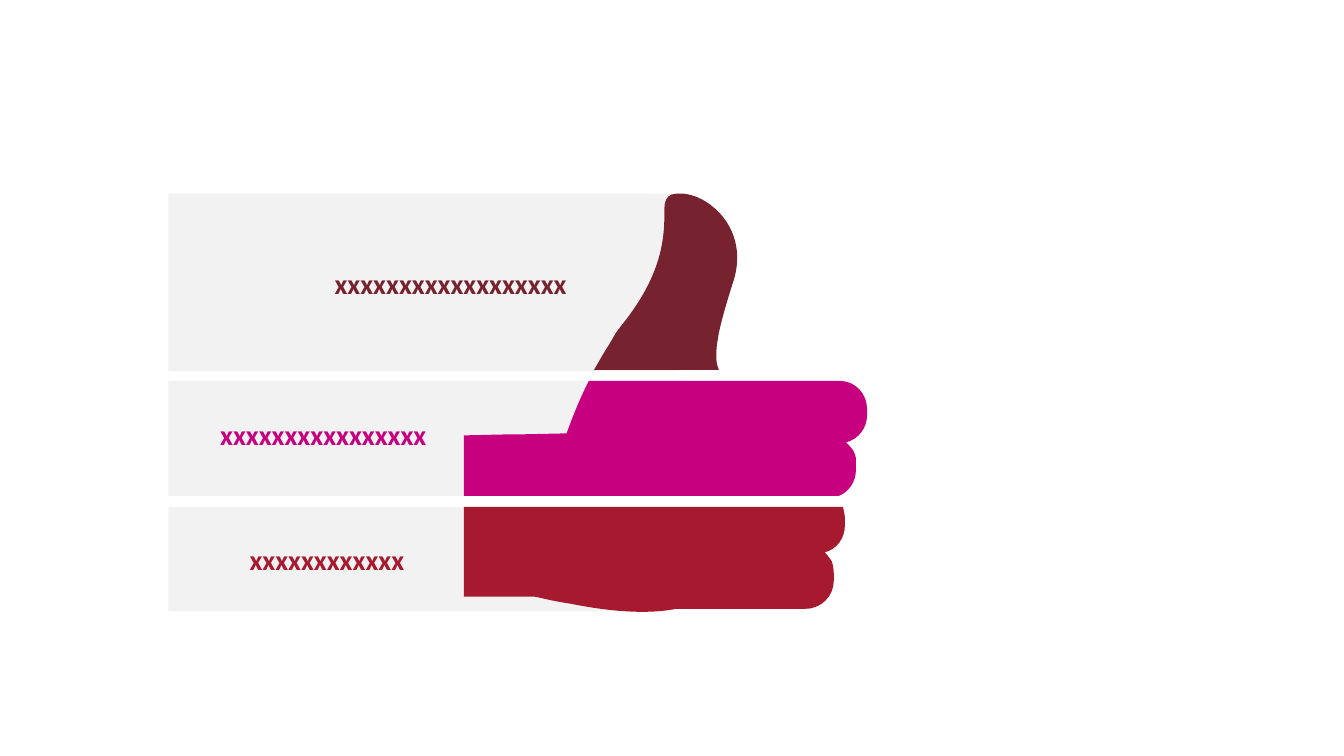
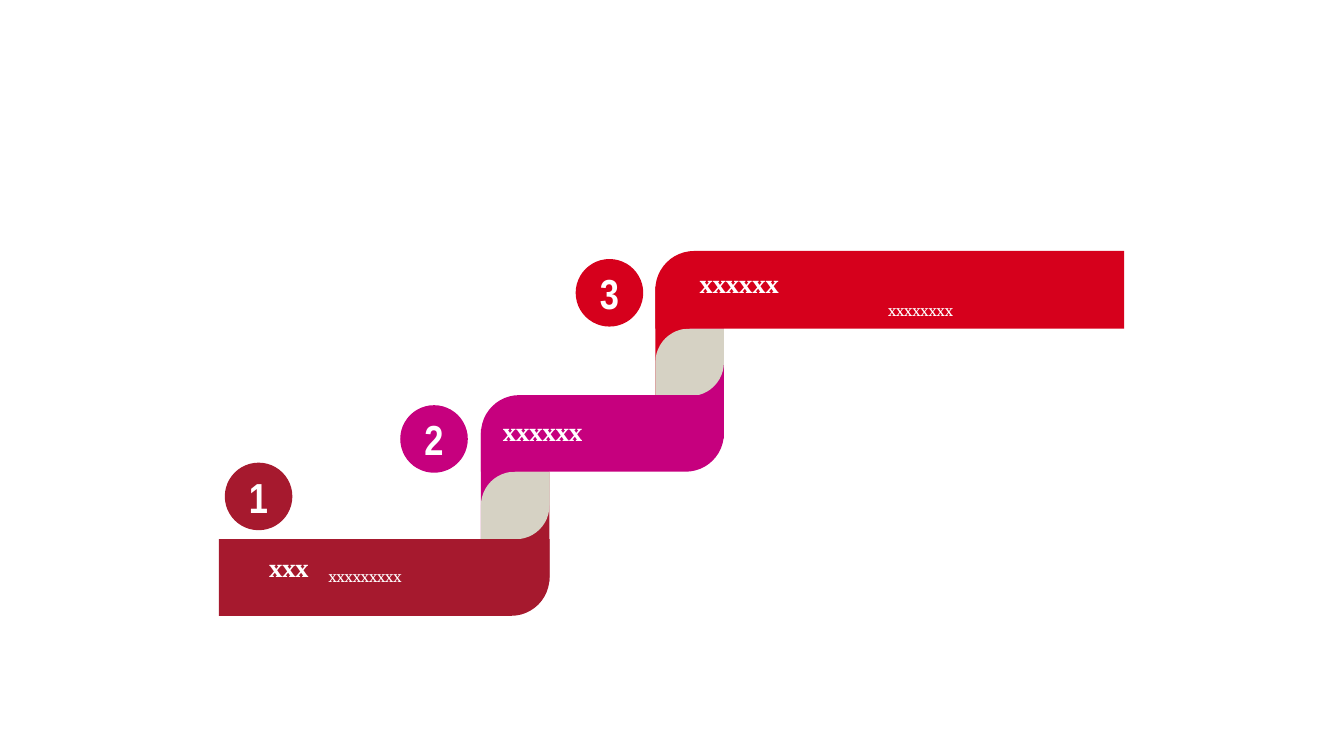
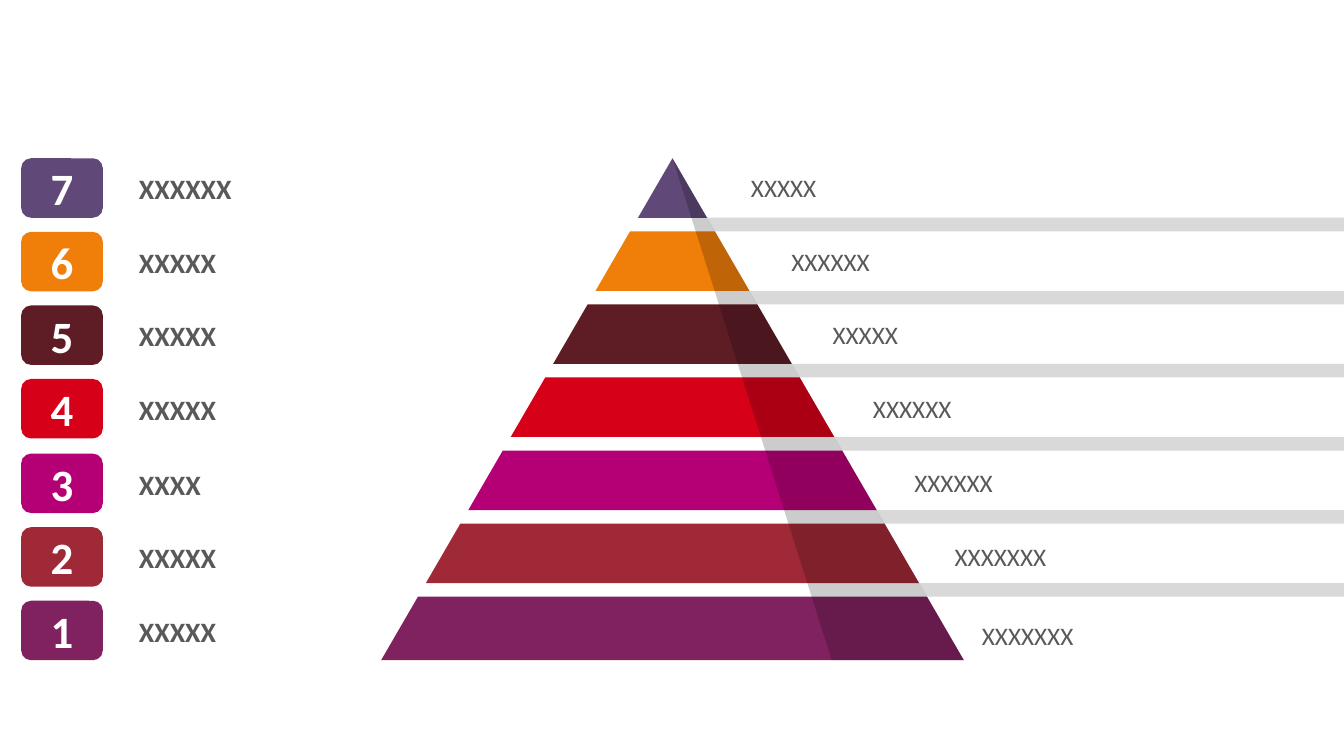
from lxml.etree import SubElement
from pptx import Presentation
from pptx.dml.color import RGBColor
from pptx.enum.shapes import MSO_SHAPE
from pptx.enum.text import MSO_ANCHOR, MSO_AUTO_SIZE, PP_ALIGN
from pptx.oxml.ns import qn
from pptx.util import Pt

PX = 9144
SLIDE_WIDTH, SLIDE_HEIGHT = 1333, 750
BLANK_LAYOUT = 6

COLOURS = {
    "white": "FFFFFF", "black": "000000", "panel": "F2F2F2", "stripe": "D9D9D9",
    "fold": "D6D2C4", "text": "595959", "maroon": "76232F", "magenta": "C6007E",
    "crimson": "A6192E", "red": "D6001C", "violet": "604878", "orange": "F07F09",
    "wine": "5E1C25", "scarlet": "D60019", "fuchsia": "B40074", "brick": "9F2936",
    "plum": "80225F",
}

FONTS = {
    "panel": {"name": "Calibri", "size": Pt(20), "bold": True},
    "step": {"name": "Cambria", "size": Pt(18), "bold": True},
    "detail": {"name": "Cambria", "size": Pt(12)},
    "circle": {"name": "Arial Narrow", "size": Pt(30), "bold": True},
    "badge": {"name": "Calibri", "size": Pt(32), "bold": True},
    "label": {"name": "Calibri", "size": Pt(20), "bold": True},
    "note": {"name": "Calibri", "size": Pt(18)},
}

EVEN_MARGINS = {
    "margin_left": 10 * PX, "margin_right": 10 * PX,
    "margin_top": 10 * PX, "margin_bottom": 10 * PX,
    "vertical_anchor": MSO_ANCHOR.MIDDLE, "word_wrap": True,
}
FRAMES = {
    "panel": {
        "margin_left": 0, "margin_right": 0, "vertical_anchor": MSO_ANCHOR.BOTTOM,
        "word_wrap": True, "auto_size": MSO_AUTO_SIZE.SHAPE_TO_FIT_TEXT,
    },
    "step": EVEN_MARGINS,
    "detail": EVEN_MARGINS,
    "circle": EVEN_MARGINS,
    "badge": {"vertical_anchor": MSO_ANCHOR.MIDDLE, "word_wrap": True},
}
FRAMES["label"] = FRAMES["note"] = {
    "vertical_anchor": MSO_ANCHOR.MIDDLE, "word_wrap": False,
    "auto_size": MSO_AUTO_SIZE.SHAPE_TO_FIT_TEXT,
}

THUMB = [
    (713, 367), (710, 361, 710, 353, 711, 342), (713, 330),
    (716, 316, 721, 299, 727, 280), (728, 277), (739, 238, 718, 214, 708, 206),
    (698, 197, 685, 192, 675, 192), (672, 192, 669, 192, 666, 193),
    (661, 195, 659, 200, 659, 206), (659, 232, 659, 267, 621, 317),
    (617, 322, 614, 326, 611, 330), (604, 342), (598, 351, 594, 359, 589, 367),
]
UPPER_FINGERS = [
    (562, 430), (515, 431), (503, 431), (460, 432), (460, 443), (460, 455),
    (460, 492), (832, 492), (842, 488, 849, 478, 849, 466), (849, 460),
    (849, 459, 849, 457, 849, 455), (849, 455, 848, 447, 843, 443),
    (842, 442, 841, 440, 839, 439), (851, 436, 860, 425, 860, 412), (860, 406),
    (860, 391, 849, 379, 835, 378), (584, 378), (572, 402, 565, 422, 562, 430),
]
LOWER_FINGERS = [
    (460, 503), (460, 557), (460, 570), (460, 592), (503, 592), (515, 592),
    (530, 592), (532, 592, 546, 596, 566, 599), (586, 603, 612, 607, 637, 607),
    (650, 607, 661, 606, 671, 604), (734, 604), (746, 604), (799, 604),
    (815, 604, 827, 591, 827, 576), (827, 570), (827, 570, 827, 562, 825, 557),
    (823, 554, 821, 551, 818, 548), (830, 545, 838, 534, 838, 521), (838, 515),
    (838, 511, 837, 507, 836, 503),
]


def paint(shape, colour, alpha=None):
    shape.shadow.inherit = False
    shape.fill.solid()
    shape.fill.fore_color.rgb = RGBColor.from_string(COLOURS[colour])
    shape.line.fill.background()
    if alpha:
        rgb = shape._element.spPr.find(qn("a:solidFill")).find(qn("a:srgbClr"))
        SubElement(rgb, qn("a:alpha")).set("val", str(alpha * 1000))


def write(shape, text, style, colour, align=PP_ALIGN.LEFT):
    frame = shape.text_frame
    for name, value in FRAMES[style].items():
        setattr(frame, name, value)
    para = frame.paragraphs[0]
    para.alignment = align
    span = para.add_run()
    span.text = text
    for name, value in FONTS[style].items():
        setattr(span.font, name, value)
    span.font.color.rgb = RGBColor.from_string(COLOURS[colour])


def add_block(page, kind, box, colour, adjustments=(), flip=None):
    shape = page.shapes.add_shape(kind, *(length * PX for length in box))
    for index, value in enumerate(adjustments):
        shape.adjustments[index] = value
    if flip:
        shape._element.spPr.find(qn("a:xfrm")).set(flip, "1")
    paint(shape, colour)
    return shape


def add_label(page, box, text, style, colour, align=PP_ALIGN.LEFT):
    shape = page.shapes.add_textbox(*(length * PX for length in box))
    write(shape, text, style, colour, align)


def bend(shape, segments):
    lines = list(shape._element.iter(qn("a:lnTo")))
    for line, segment in zip(lines, segments):
        if len(segment) == 2:
            continue
        line.tag = qn("a:cubicBezTo")
        line.clear()
        for x, y in zip(segment[::2], segment[1::2]):
            point = SubElement(line, qn("a:pt"))
            point.set("x", str(x * PX - shape.left))
            point.set("y", str(y * PX - shape.top))


def add_outline(page, segments, colour, alpha=None):
    ends = [(x * PX, y * PX) for *_, x, y in segments]
    builder = page.shapes.build_freeform(*ends[0])
    builder.add_line_segments(ends[1:], close=True)
    shape = builder.convert_to_shape()
    bend(shape, segments[1:])
    paint(shape, colour, alpha)


def build_thumb(page):
    rows = [
        ((167, 378, 512, 114), UPPER_FINGERS, "magenta", (203, 408, 220, 44), "x" * 16),
        ((167, 503, 467, 103), LOWER_FINGERS, "crimson", (181, 532, 220, 44), "x" * 12),
        ((167, 192, 506, 176), THUMB, "maroon", (174, 259, 388, 44), "x" * 18),
    ]
    for panel, outline, colour, label, text in rows:
        add_block(page, MSO_SHAPE.RECTANGLE, panel, "panel")
        add_outline(page, outline, colour)
        add_label(page, label, text, "panel", colour, PP_ALIGN.RIGHT)


def add_fold(page, left, top, upper, lower):
    add_block(page, MSO_SHAPE.RECTANGLE, (left, top - 42, 34, 109), upper)
    add_block(page, MSO_SHAPE.RECTANGLE, (left + 34, top, 34, 109), lower)
    add_block(page, MSO_SHAPE.ROUND_2_DIAG_RECTANGLE, (left, top, 68, 67), "fold", (0.5, 0))


def build_ribbon(page):
    add_fold(page, 477, 468, "magenta", "crimson")
    add_fold(page, 650, 326, "red", "magenta")
    single, diagonal = MSO_SHAPE.ROUND_1_RECTANGLE, MSO_SHAPE.ROUND_2_DIAG_RECTANGLE
    steps = [
        ("1", "crimson", single, (217, 535, 328, 76), (0.5,), "flipV", (223, 459)),
        ("2", "magenta", diagonal, (477, 392, 241, 76), (0.5, 0), None, (397, 402)),
        ("3", "red", single, (650, 249, 465, 77), (0.5,), "flipH", (571, 257)),
    ]
    for number, colour, kind, box, adjustments, flip, corner in steps:
        add_block(page, kind, box, colour, adjustments, flip)
        circle = add_block(page, MSO_SHAPE.OVAL, (*corner, 67, 67), colour)
        write(circle, number, "circle", "white", PP_ALIGN.CENTER)
    labels = [
        ((114, 549, 202, 28), "xxx", "step", PP_ALIGN.RIGHT),
        ((316, 553, 218, 36), "xxxxxxxxx", "detail", PP_ALIGN.LEFT),
        ((489, 410, 254, 36), "xxxxxx", "step", PP_ALIGN.LEFT),
        ((684, 274, 394, 15), "xxxxxx", "step", PP_ALIGN.LEFT),
        ((871, 289, 206, 36), "xxxxxxxx", "detail", PP_ALIGN.LEFT),
    ]
    for box, text, style, align in labels:
        add_label(page, box, text, style, "white", align)


def build_pyramid(page):
    apex, top, base, half_base = 667, 157, 655, 289
    band_pitch, band_height = (592 - top) / 6, 59
    badge_pitch = (596 - top) / 6
    levels = [
        ("violet", "XXXXXX", "XXXXX"),
        ("orange", "XXXXX", "XXXXXX"),
        ("wine", "XXXXX", "XXXXX"),
        ("scarlet", "XXXXX", "XXXXXX"),
        ("fuchsia", "XXXX", "XXXXXX"),
        ("brick", "XXXXX", "XXXXXXX"),
        ("plum", "XXXXX", "XXXXXXX"),
    ]
    last = len(levels) - 1

    def half_width(y):
        return (y - top) * half_base / (base - top)

    for index, (colour, _, _) in enumerate(levels):
        upper = top + index * band_pitch
        lower = base if index == last else upper + band_height
        near, far = half_width(upper), half_width(lower)
        peak = [(apex, upper)]
        edge = [(apex - near, upper), (apex + near, upper)] if index else peak
        add_outline(page, edge + [(apex + far, lower), (apex - far, lower)], colour)
        if index < last:
            below = upper + band_pitch
            add_outline(page, [(apex + far, lower), (SLIDE_WIDTH, lower),
                               (SLIDE_WIDTH, below), (apex + half_width(below), below)],
                        "stripe")
    add_outline(page, [(apex, top), (apex + half_base, base), (825, base)], "black", 20)

    for index, (colour, label, note) in enumerate(levels):
        y = round(top + index * badge_pitch)
        badge = add_block(page, MSO_SHAPE.ROUNDED_RECTANGLE, (21, y, 81, 59), colour)
        write(badge, str(len(levels) - index), "badge", "white", PP_ALIGN.CENTER)
        add_label(page, (128, y + 8, 22 + 15 * len(label), 44), label, "label", "text")
        shift, drop = (-13, 5) if index == last else (0, 0)
        note_left = round(735 + 40.4 * index) + shift
        add_label(page, (note_left, y + 9 + drop, 21 + 13 * len(note), 40),
                  note, "note", "text")


def main():
    deck = Presentation()
    deck.slide_width = SLIDE_WIDTH * PX
    deck.slide_height = SLIDE_HEIGHT * PX
    for build in (build_thumb, build_ribbon, build_pyramid):
        build(deck.slides.add_slide(deck.slide_layouts[BLANK_LAYOUT]))
    deck.save("out.pptx")


if __name__ == "__main__":
    main()
